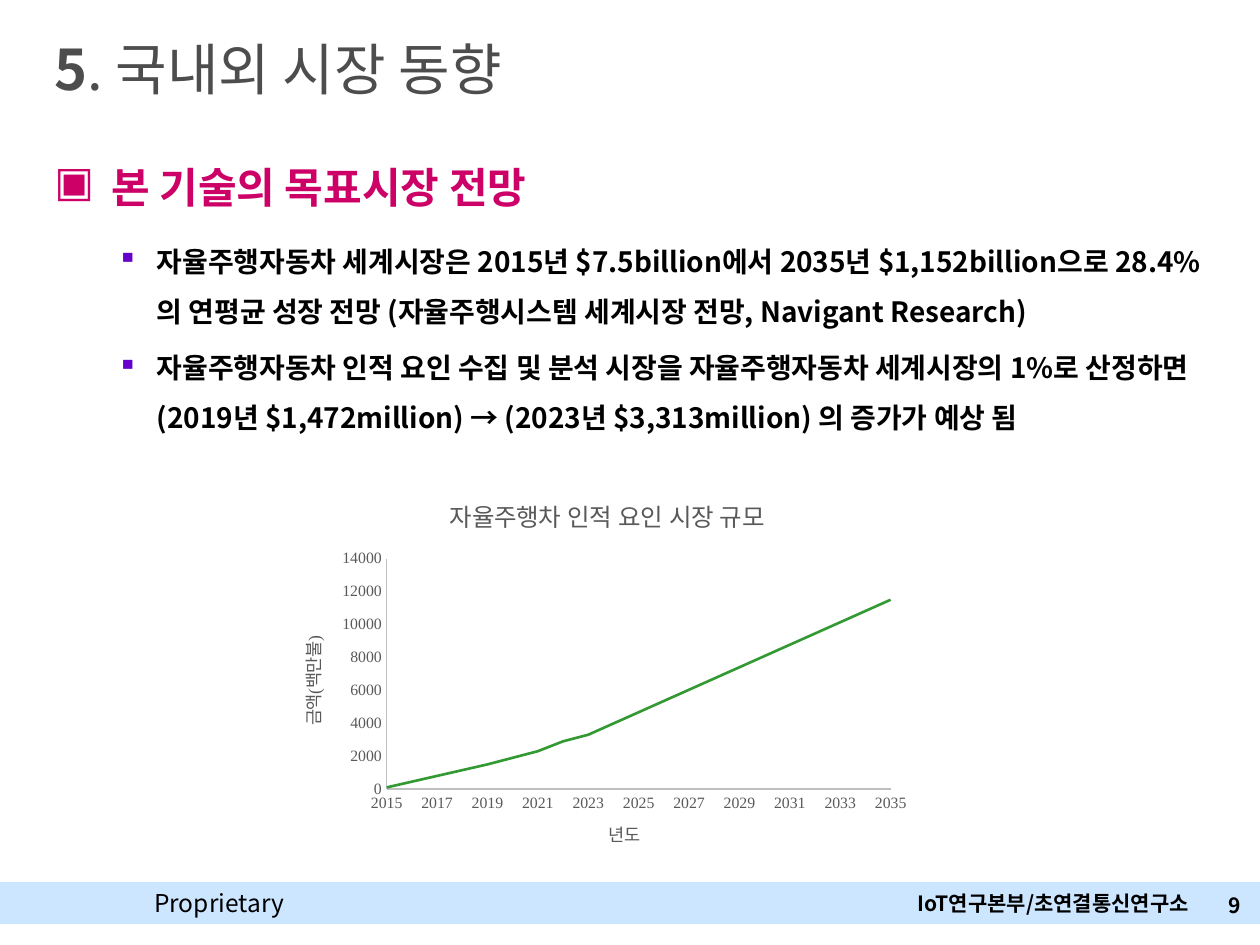
from lxml import etree
from pptx import Presentation
from pptx.chart.data import XyChartData
from pptx.dml.color import RGBColor
from pptx.enum.chart import XL_CHART_TYPE, XL_TICK_MARK
from pptx.enum.shapes import MSO_SHAPE
from pptx.enum.text import MSO_ANCHOR, PP_ALIGN
from pptx.oxml import parse_xml
from pptx.oxml.ns import nsdecls, qn
from pptx.util import Pt

SCATTER_LINES = XL_CHART_TYPE.XY_SCATTER_LINES_NO_MARKERS
NO_TICKS = XL_TICK_MARK.NONE
RECTANGLE = MSO_SHAPE.RECTANGLE
MIDDLE = MSO_ANCHOR.MIDDLE
LEFT, RIGHT = PP_ALIGN.LEFT, PP_ALIGN.RIGHT

SANS, SERIF = "Noto Sans CJK KR", "Times New Roman"
BLACK, GREY, TITLE_GREY = "000000", "595959", "4D4D4D"
MAGENTA, PURPLE, GREEN = "CC0066", "6600CC", "339933"
AXIS_GREY, FOOTER_BLUE = "BFBFBF", "CDE6FF"

OUTLOOK = [
    "자율주행자동차 세계시장은 2015년 $7.5billion에서 2035년 $1,152billion으로 "
    "28.4%의 연평균 성장 전망 (자율주행시스템 세계시장 전망, Navigant Research)",
    "자율주행자동차 인적 요인 수집 및 분석 시장을 자율주행자동차 세계시장의 1%로 "
    "산정하면 (2019년 $1,472million) → (2023년 $3,313million) 의 증가가 예상 됨",
]
MARKET_SIZE = [(2015, 100), (2019, 1500), (2020, 1900), (2021, 2300),
               (2022, 2900), (2023, 3300), (2035, 11500)]


def rgb(color):
    return RGBColor.from_string(color)


def write(paragraph, text, size, color=BLACK, bold=False, font=SANS, align=LEFT):
    """Add a run to the paragraph, with one font for Latin and Korean text."""
    paragraph.alignment = align
    run = paragraph.add_run()
    run.text = text
    run.font.size, run.font.bold, run.font.name = Pt(size), bold, font
    run.font.color.rgb = rgb(color)
    east_asian = etree.SubElement(run.font._element, qn("a:ea"))
    east_asian.set("typeface", font)


def add_text_frame(slide, left, top, width, height):
    box = slide.shapes.add_textbox(Pt(left), Pt(top), Pt(width), Pt(height))
    box.text_frame.word_wrap = True
    return box.text_frame


def set_bullet(paragraph, char, color, margin, hanging):
    properties = paragraph._p.get_or_add_pPr()
    properties.set("marL", str(Pt(margin)))
    properties.set("indent", str(-Pt(hanging)))
    properties.append(parse_xml(
        f'<a:buClr {nsdecls("a")}><a:srgbClr val="{color}"/></a:buClr>'))
    properties.append(parse_xml(f'<a:buChar {nsdecls("a")} char="{char}"/>'))


def add_title(slide):
    title = slide.shapes.title
    title.left, title.top, title.width, title.height = Pt(24), Pt(16), Pt(564), Pt(46)
    title.text_frame.vertical_anchor = MIDDLE
    heading = title.text_frame.paragraphs[0]
    write(heading, "5", 32, TITLE_GREY, bold=True)
    write(heading, ". 국내외 시장 동향", 32, TITLE_GREY)


def add_footer(slide):
    band = slide.shapes.add_shape(RECTANGLE, 0, Pt(504), Pt(720), Pt(24))
    band.shadow.inherit = False
    band.fill.solid()
    band.fill.fore_color.rgb = rgb(FOOTER_BLUE)
    band.line.fill.background()

    notice = add_text_frame(slide, 81, 504, 96, 24)
    write(notice.paragraphs[0], "Proprietary", 14)
    department = add_text_frame(slide, 517, 505.5, 170, 22)
    write(department.paragraphs[0], "IoT연구본부/초연결통신연구소", 12, bold=True)
    page_number = add_text_frame(slide, 666, 510, 46, 15)
    page_number.margin_left = page_number.margin_right = Pt(3)
    page_number.margin_top = page_number.margin_bottom = 0
    write(page_number.paragraphs[0], "9", 12, bold=True, align=RIGHT)


def add_outlook(slide):
    frame = add_text_frame(slide, 24, 88.5, 675, 146)
    heading = frame.paragraphs[0]
    set_bullet(heading, "▣", MAGENTA, margin=27, hanging=27)
    heading.space_after = Pt(6)
    write(heading, " 본 기술의 목표시장 전망", 24, MAGENTA, bold=True)
    for statement in OUTLOOK:
        item = frame.add_paragraph()
        item.level = 1
        set_bullet(item, "▪", PURPLE, margin=58.5, hanging=22.5)
        item.line_spacing = 1.5
        item.space_before = Pt(3.2)
        write(item, statement, 16, bold=True)


def format_axis(axis, title, low, high, step):
    axis.minimum_scale, axis.maximum_scale, axis.major_unit = low, high, step
    axis.has_major_gridlines = False
    axis.major_tick_mark = axis.minor_tick_mark = NO_TICKS
    axis.format.line.color.rgb = rgb(AXIS_GREY)
    axis.format.line.width = Pt(0.75)
    labels = axis.tick_labels
    labels.number_format, labels.number_format_is_linked = "General", False
    labels.font.size, labels.font.name = Pt(9), SERIF
    labels.font.color.rgb = rgb(GREY)
    title_frame = axis.axis_title.text_frame
    write(title_frame.paragraphs[0], title, 10, GREY, font=SERIF, align=None)
    return title_frame


def place_plot(chart, x, y, w, h):
    """Fix the inner plot area, as fractions of the chart."""
    plot_area = chart._chartSpace.chart.plotArea
    for automatic in plot_area.findall(qn("c:layout")):
        plot_area.remove(automatic)
    sizes = "".join(f'<c:{key} val="{value}"/>'
                    for key, value in zip("xywh", (x, y, w, h)))
    plot_area.insert(0, parse_xml(
        f'<c:layout {nsdecls("c")}><c:manualLayout><c:layoutTarget val="inner"/>'
        f'<c:xMode val="edge"/><c:yMode val="edge"/>{sizes}'
        '</c:manualLayout></c:layout>'))


def add_market_chart(slide):
    data = XyChartData()
    market = data.add_series("Series 1")
    for year, amount in MARKET_SIZE:
        market.add_data_point(year, amount)
    chart = slide.shapes.add_chart(
        SCATTER_LINES, Pt(167), Pt(276), Pt(360), Pt(216), data).chart
    chart.font.size, chart.font.name = Pt(10), SERIF
    chart.font.color.rgb = rgb(BLACK)
    chart.has_legend = False
    chart.plots[0].vary_by_categories = False
    chart.has_title = True
    write(chart.chart_title.text_frame.paragraphs[0],
          "자율주행차 인적 요인 시장 규모", 14, GREY, font=SERIF, align=None)
    format_axis(chart.category_axis, "년도", 2015, 2035, 2)
    amount_title = format_axis(chart.value_axis, "금액(백만불)", 0, 14000, 2000)
    amount_title._txBody.bodyPr.set("rot", "-5400000")
    place_plot(chart, 0.15, 0.2, 0.8, 0.61)

    growth = chart.plots[0].series[0]
    growth.smooth = False
    growth.format.line.color.rgb = rgb(GREEN)
    growth.format.line.width = Pt(1.5)


def main():
    presentation = Presentation()
    presentation.slide_width, presentation.slide_height = Pt(720), Pt(540)
    slide = presentation.slides.add_slide(presentation.slide_layouts[5])
    add_footer(slide)
    add_title(slide)
    add_outlook(slide)
    add_market_chart(slide)
    presentation.save("out.pptx")


if __name__ == "__main__":
    main()
